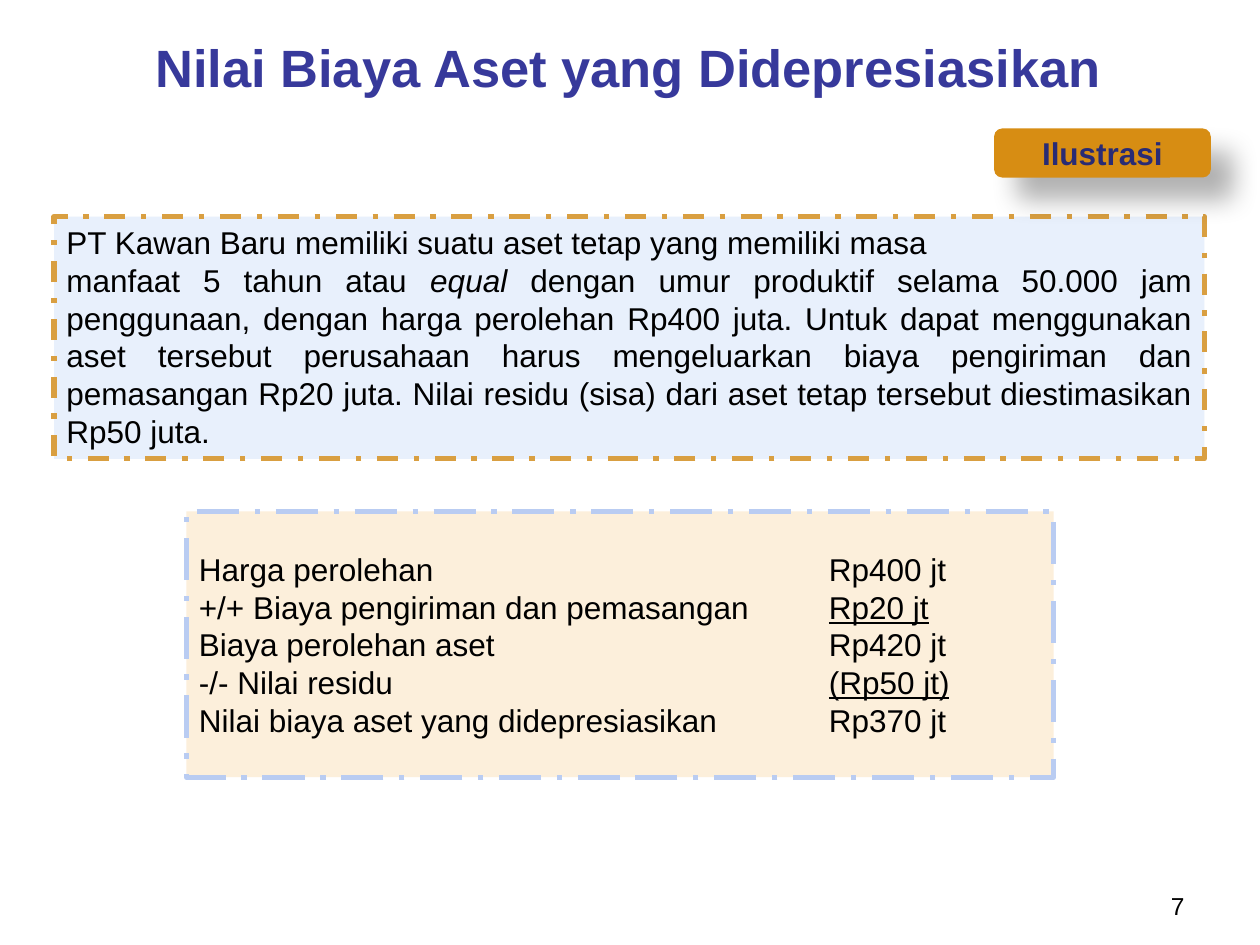
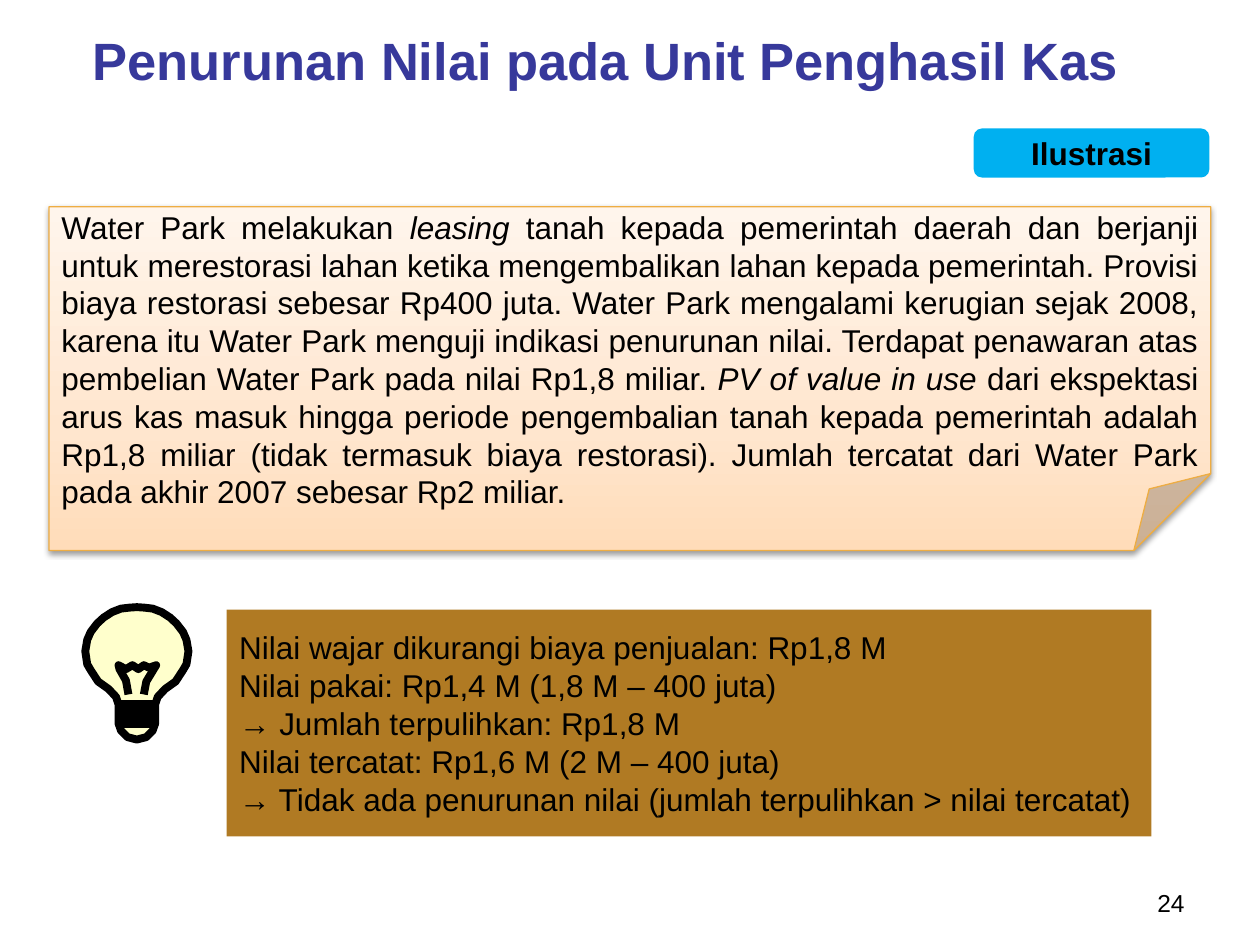
"""Build two illustrated slides on depreciable asset cost and impairment."""

from lxml.etree import SubElement
from pptx import Presentation
from pptx.dml.color import RGBColor as Rgb
from pptx.enum.dml import MSO_LINE_DASH_STYLE as Dash
from pptx.enum.shapes import MSO_SHAPE as Shape
from pptx.enum.text import MSO_ANCHOR as Anchor, PP_ALIGN as Align
from pptx.oxml.ns import qn
from pptx.util import Cm, Pt

FONT = "Arial"
COLORS = {
    "title": "37399B",
    "text": "000000",
    "badge_text": "292B74",
    "orange": "D78D13",
    "cyan": "00B0F0",
    "pale_blue": "E8F0FC",
    "gold_line": "D99F41",
    "cream": "FCEFDB",
    "blue_line": "B9CCF2",
    "note_line": "EEAD43",
    "brown": "B07A23",
    "bulb": "FFFFCC",
}
NOTE_STOPS = [(0, "FFDCB9"), (35, "FFE6CE"), (100, "FFF5EC")]


def add_box(page, kind, place, lines, fill=None, align=Align.LEFT, anchor=Anchor.MIDDLE,
            size=18, color="text", bold=False, emphasis="italic"):
    """Add a text box or filled shape; text between asterisks gets the emphasis."""
    lengths = [Cm(value) for value in place]
    if kind is None:
        box = page.shapes.add_textbox(*lengths)
    else:
        box = page.shapes.add_shape(kind, *lengths)
        box.shadow.inherit = False
        box.fill.solid()
        box.fill.fore_color.rgb = Rgb.from_string(COLORS[fill])
        box.line.fill.background()
    frame = box.text_frame
    frame.word_wrap = True
    frame.vertical_anchor = anchor
    for index, line in enumerate(lines):
        para = frame.paragraphs[0] if index == 0 else frame.add_paragraph()
        para.alignment = align
        for part, words in enumerate(line.split("*")):
            if not words:
                continue
            span = para.add_run()
            span.text = words
            span.font.name = FONT
            span.font.size = Pt(size)
            span.font.bold = bold
            span.font.color.rgb = Rgb.from_string(COLORS[color])
            if part % 2:
                setattr(span.font, emphasis, True)
    return box


def add_shadow(box, alpha, blur, distance, angle):
    """Give a shape a soft black outer shadow."""
    effects = box.element.spPr.find(qn("a:effectLst"))
    shadow = SubElement(effects, qn("a:outerShdw"), blurRad=str(Pt(blur)),
                        dist=str(Pt(distance)), dir=str(angle * 60000),
                        algn="tl", rotWithShape="0")
    tint = SubElement(shadow, qn("a:srgbClr"), val="000000")
    SubElement(tint, qn("a:alpha"), val=str(alpha * 1000))


deck = Presentation()
deck.slide_width = Cm(25.4)
deck.slide_height = Cm(19.05)

headings = [
    ("Nilai Biaya Aset yang Didepresiasikan", 1.24, 0.56, "7", 17.83),
    ("Penurunan Nilai pada Unit Penghasil Kas", 0.79, 0.41, "24", 17.78),
]
pages = []
for title, title_left, title_top, number, number_top in headings:
    page = deck.slides.add_slide(deck.slide_layouts[6])
    add_box(page, None, (title_left, title_top, 22.86, 1.57), [title],
            align=Align.CENTER, size=30, color="title", bold=True)
    add_box(page, None, (18.21, number_top, 5.92, 0.89), [number],
            align=Align.RIGHT, anchor=Anchor.TOP, size=14)
    pages.append(page)
cost_page, impairment_page = pages

case_box = add_box(cost_page, Shape.RECTANGLE, (1.09, 4.37, 23.19, 4.88), [
    "PT Kawan Baru memiliki suatu aset tetap yang memiliki masa",
    "manfaat 5 tahun atau *equal *dengan umur produktif selama 50.000 jam penggunaan, "
    "dengan harga perolehan Rp400 juta. Untuk dapat menggunakan aset tersebut perusahaan "
    "harus mengeluarkan biaya pengiriman dan pemasangan Rp20 juta. Nilai residu (sisa) "
    "dari aset tetap tersebut diestimasikan Rp50 juta.",
], "pale_blue", Align.JUSTIFY, Anchor.TOP)
case_box.text_frame.paragraphs[0].alignment = Align.LEFT

cost_box = add_box(cost_page, Shape.RECTANGLE, (3.76, 10.31, 17.48, 5.36), [
    "Harga perolehan\tRp400 jt",
    "+/+ Biaya pengiriman dan pemasangan\t*Rp20 jt*",
    "Biaya perolehan aset\tRp420 jt",
    "-/- Nilai residu\t*(Rp50 jt)*",
    "Nilai biaya aset yang didepresiasikan\tRp370 jt",
], "cream", emphasis="underline")
for para in cost_box.text_frame.paragraphs:
    tabs = SubElement(para._p.get_or_add_pPr(), qn("a:tabLst"))
    SubElement(tabs, qn("a:tab"), pos=str(Cm(12.7)), algn="l")

for box, color, dash in [(case_box, "gold_line", Dash.DASH_DOT),
                         (cost_box, "blue_line", Dash.LONG_DASH_DOT)]:
    box.line.color.rgb = Rgb.from_string(COLORS[color])
    box.line.width = Pt(3)
    box.line.dash_style = dash

badges = [
    (cost_page, 20.04, 4.37, "orange", "badge_text"),
    (impairment_page, 19.63, 4.75, "cyan", "text"),
]
for page, left, width, fill, color in badges:
    badge = add_box(page, Shape.ROUNDED_RECTANGLE, (left, 2.59, width, 0.99), ["Ilustrasi"],
                    fill, Align.CENTER, color=color, bold=True)
    if page is cost_page:
        add_shadow(badge, 30, 15, 18, 45)

note = add_box(impairment_page, Shape.FOLDED_CORNER, (0.99, 4.17, 23.42, 6.93), [
    "Water Park melakukan *leasing *tanah kepada pemerintah daerah dan berjanji untuk "
    "merestorasi lahan ketika mengembalikan lahan kepada pemerintah. Provisi biaya restorasi "
    "sebesar Rp400 juta. Water Park mengalami kerugian sejak 2008, karena itu Water Park "
    "menguji indikasi penurunan nilai. Terdapat penawaran atas pembelian Water Park pada "
    "nilai Rp1,8 miliar. *PV of value in use *dari ekspektasi arus kas masuk hingga periode "
    "pengembalian tanah kepada pemerintah adalah Rp1,8 miliar (tidak termasuk biaya restorasi). "
    "Jumlah tercatat dari Water Park pada akhir 2007 sebesar Rp2 miliar.",
], "cream", Align.JUSTIFY, Anchor.TOP)
fold = note.element.spPr.find(qn("a:prstGeom")).find(qn("a:avLst"))
SubElement(fold, qn("a:gd"), name="adj", fmla="val 22400")
note.text_frame.margin_top = Cm(0.02)
note.line.color.rgb = Rgb.from_string(COLORS["note_line"])
note.line.width = Pt(0.75)
note.fill.gradient()
note.fill.gradient_angle = 90
stops = note.element.spPr.find(qn("a:gradFill")).find(qn("a:gsLst"))
for stop in list(stops):
    stops.remove(stop)
for position, color in NOTE_STOPS:
    stop = SubElement(stops, qn("a:gs"), pos=str(position * 1000))
    SubElement(stop, qn("a:srgbClr"), val=color)
add_shadow(note, 38, 3.1, 1.6, 90)

add_box(impairment_page, Shape.RECTANGLE, (4.57, 12.29, 18.64, 4.57), [
    "Nilai wajar dikurangi biaya penjualan: Rp1,8 M",
    "Nilai pakai: Rp1,4 M (1,8 M – 400 juta)",
    "→ Jumlah terpulihkan: Rp1,8 M",
    "Nilai tercatat: Rp1,6 M (2 M – 400 juta)",
    "→ Tidak ada penurunan nilai (jumlah terpulihkan > nilai tercatat)",
], "brown", Align.JUSTIFY)

bulb_axis = 2.76
half_profile = [
    (0, 12.24), (0.15, 12.25), (0.32, 12.27), (0.5, 12.34), (0.67, 12.45), (0.8, 12.57),
    (0.93, 12.74), (1, 12.9), (1.04, 13.13), (1, 13.39), (0.93, 13.51), (0.78, 13.74),
    (0.57, 13.89), (0.42, 14.05), (0.37, 14.2), (0.37, 14.58), (0.32, 14.73),
    (0.19, 14.86), (0, 14.91),
]
right_side = [(bulb_axis + offset, y) for offset, y in half_profile]
left_side = [(bulb_axis - offset, y) for offset, y in reversed(half_profile[1:-1])]
filament = [
    (2.59, 14), (2.54, 13.72), (2.41, 13.49), (2.39, 13.41), (2.54, 13.49), (2.67, 13.41),
    (2.79, 13.49), (2.9, 13.41), (3, 13.46), (3.15, 13.41), (2.95, 13.74), (2.9, 14),
]
screw = [(x, 14.2 + 0.13 * row) for row in range(4)
         for x in ((2.41, 3.12) if row % 2 == 0 else (3.12, 2.41))]

for points, closed in [(right_side + left_side, True), (filament, False), (screw, False)]:
    vertices = [(Cm(x), Cm(y)) for x, y in points]
    builder = impairment_page.shapes.build_freeform(*vertices[0])
    builder.add_line_segments(vertices[1:], close=closed)
    outline = builder.convert_to_shape()
    outline.shadow.inherit = False
    if closed:
        outline.fill.solid()
        outline.fill.fore_color.rgb = Rgb.from_string(COLORS["bulb"])
    else:
        outline.fill.background()
    outline.line.color.rgb = Rgb.from_string(COLORS["text"])
    outline.line.width = Pt(4.5)

deck.save("out.pptx")
